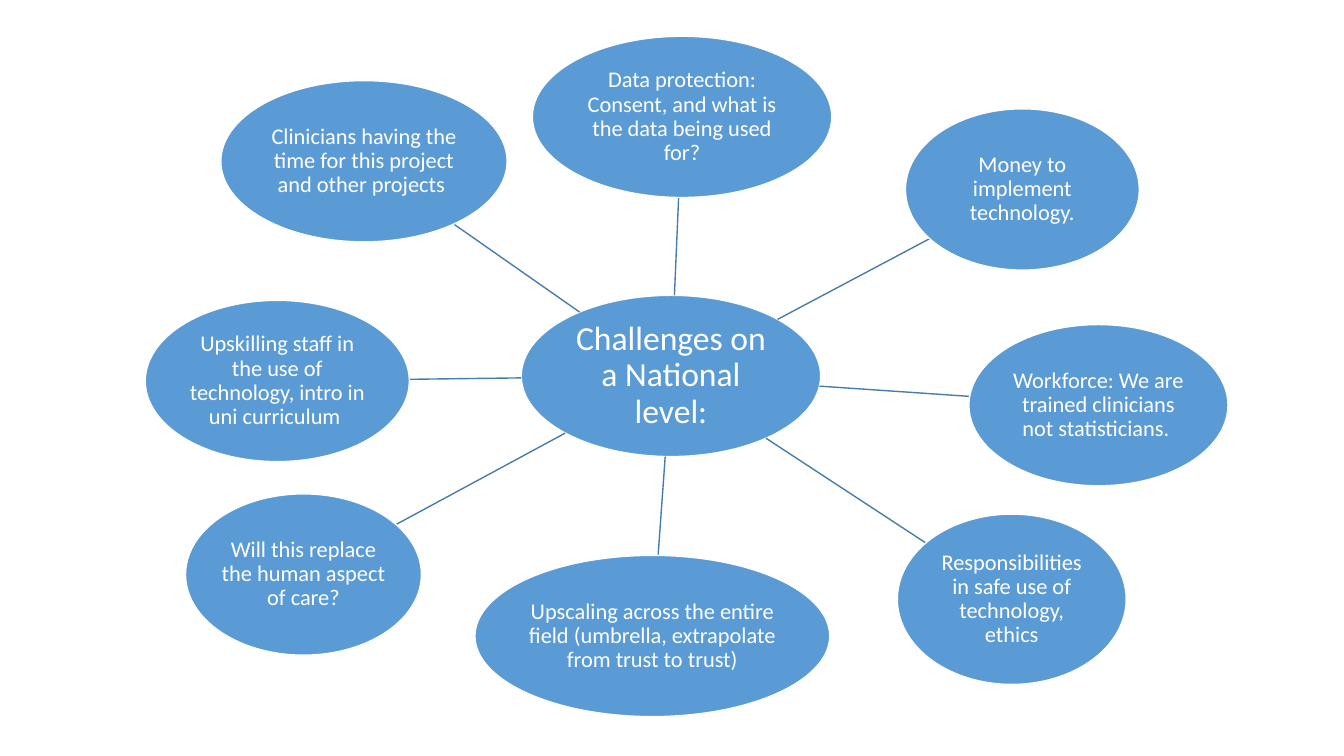
"""Build a radial diagram of challenges on a national level."""
import math

from pptx import Presentation
from pptx import util as u
from pptx.dml.color import RGBColor
from pptx.enum import shapes, text
from pptx.oxml import xmlchemy as x

PX = 9144
WHITE = RGBColor(0xFF, 0xFF, 0xFF)
BLUE = RGBColor(0x5B, 0x9B, 0xD5)
SPOKE = RGBColor(0x49, 0x7C, 0xAB)
FRAME = dict(word_wrap=True, vertical_anchor=text.MSO_ANCHOR.MIDDLE,
             margin_left=PX, margin_right=PX, margin_top=PX, margin_bottom=PX)
PARAGRAPH = dict(alignment=text.PP_ALIGN.CENTER, line_spacing=0.9)

HUB = (517, 293, 297, 160, "Challenges on a National level:")
CHALLENGES = [
    (528, 36, 297, 160, "Data protection: Consent, and what is the data being used for?"),
    (898, 108, 232, 160, "Money to implement technology."),
    (961, 322, 257, 160, "Workforce: We are trained clinicians not statisticians. "),
    (890, 510, 227, 169, "Responsibilities in safe use of technology, ethics"),
    (471, 551, 352, 160, "Upscaling across the entire field (umbrella, extrapolate from trust to trust)"),
    (184, 490, 234, 160, "Will this replace the human aspect of care?"),
    (144, 298, 262, 160, "Upskilling staff in the use of technology, intro in uni curriculum "),
    (219, 80, 284, 160, "Clinicians having the time for this project and other projects "),
]


def add_bubble(s, bubble, size):
    left, top, width, height, label = bubble
    sp = s.shapes.add_shape(shapes.MSO_SHAPE.OVAL,
                            *(v * PX for v in (left, top, width, height)))
    sp.shadow.inherit = False
    sp.fill.solid()
    sp.fill.fore_color.rgb = BLUE
    sp.line.color.rgb = WHITE
    sp.line.width = u.Pt(1)
    tf = sp.text_frame
    p = tf.paragraphs[0]
    r = p.add_run()
    r.text = label
    r.font.color.rgb = WHITE
    font = dict(name="Calibri", size=u.Pt(size))
    for target, values in ((tf, FRAME), (p, PARAGRAPH), (r.font, font)):
        for key, value in values.items():
            setattr(target, key, value)


def edge_point(bubble, toward):
    left, top, width, height, _ = bubble
    cx, cy = left + width / 2, top + height / 2
    dx = toward[0] + toward[2] / 2 - cx
    dy = toward[1] + toward[3] / 2 - cy
    reach = 1 / math.hypot(2 * dx / width, 2 * dy / height)
    return round((cx + dx * reach) * PX), round((cy + dy * reach) * PX)


prs = Presentation()
prs.slide_width, prs.slide_height = 1333 * PX, 750 * PX
s = prs.slides.add_slide(prs.slide_layouts[6])

add_bubble(s, HUB, 24)
for challenge in CHALLENGES:
    spoke = s.shapes.add_connector(shapes.MSO_CONNECTOR.STRAIGHT,
                                   *edge_point(HUB, challenge),
                                   *edge_point(challenge, HUB))
    spoke.line.color.rgb = SPOKE
    spoke.line.width = u.Pt(1)
    spoke.element.spPr.append(x.OxmlElement("a:effectLst"))
    add_bubble(s, challenge, 16)

prs.save("out.pptx")
